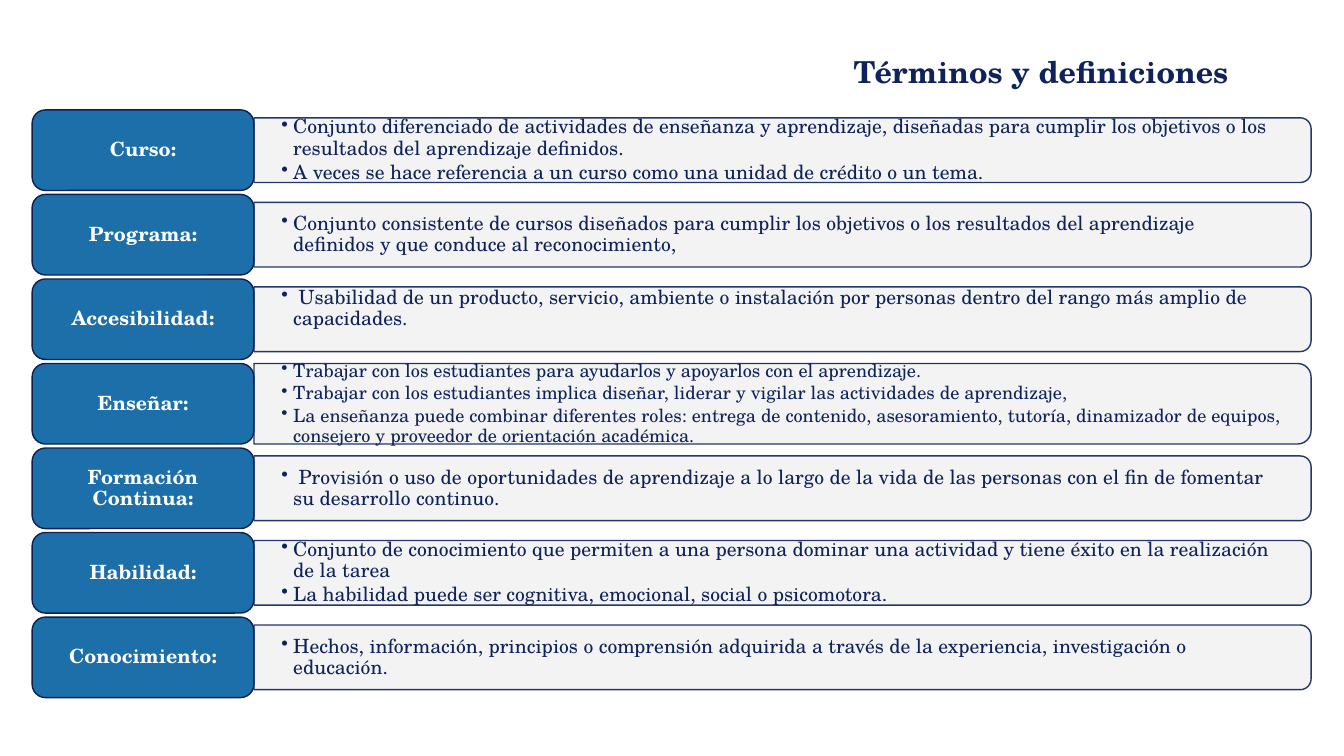
from typing import NamedTuple

from lxml import etree
from pptx import Presentation
from pptx.dml.color import RGBColor
from pptx.enum.shapes import MSO_SHAPE
from pptx.enum.text import MSO_ANCHOR, PP_ALIGN
from pptx.oxml.ns import qn
from pptx.util import Cm, Pt

ROUNDED = MSO_SHAPE.ROUNDED_RECTANGLE
ROUNDED_END = MSO_SHAPE.ROUND_2_SAME_RECTANGLE
MIDDLE = MSO_ANCHOR.MIDDLE
LEFT, CENTER = PP_ALIGN.LEFT, PP_ALIGN.CENTER

FONT = "TeX Gyre Schola"
NAVY, DARK_NAVY, BLUE = "0F235A", "0E2052", "1D6FA9"
PALE_GRAY, WHITE = "F2F2F2", "FFFFFF"

ROWS_TOP, ROW_PITCH = 2.77, 2.13
TERM_LEFT, TERM_WIDTH, TERM_HEIGHT = 0.81, 5.59, 2.03
PANEL_LEFT = TERM_LEFT + TERM_WIDTH
PANEL_WIDTH = 26.64


class Entry(NamedTuple):
    """A term, its definitions and the fit of its panel."""
    term: str
    definitions: list
    size: int = 14
    panel_height: float = 1.63
    bottom_inset: float = 0.36


ENTRIES = [
    Entry("Curso:", [
        "Conjunto diferenciado de actividades de enseñanza y aprendizaje, diseñadas para "
        "cumplir los objetivos o los resultados del aprendizaje definidos.",
        "A veces se hace referencia a un curso como una unidad de crédito o un tema."]),
    Entry("Programa:", [
        "Conjunto consistente de cursos diseñados para cumplir los objetivos o los "
        "resultados del aprendizaje definidos y que conduce al reconocimiento,"]),
    Entry("Accesibilidad:", [
        " Usabilidad de un producto, servicio, ambiente o instalación por personas dentro "
        "del rango más amplio de capacidades."], bottom_inset=0.9),
    Entry("Enseñar:", [
        "Trabajar con los estudiantes para ayudarlos y apoyarlos con el aprendizaje.",
        "Trabajar con los estudiantes implica diseñar, liderar y vigilar las actividades "
        "de aprendizaje,",
        "La enseñanza puede combinar diferentes roles: entrega de contenido, asesoramiento, "
        "tutoría, dinamizador de equipos, consejero y proveedor de orientación académica."],
        size=13, panel_height=2.03),
    Entry("Formación Continua:", [
        " Provisión o uso de oportunidades de aprendizaje a lo largo de la vida de las "
        "personas con el fin de fomentar su desarrollo continuo."]),
    Entry("Habilidad:", [
        "Conjunto de conocimiento que permiten a una persona dominar una actividad y tiene "
        "éxito en la realización de la tarea",
        "La habilidad puede ser cognitiva, emocional, social o psicomotora."]),
    Entry("Conocimiento:", [
        "Hechos, información, principios o comprensión adquirida a través de la "
        "experiencia, investigación o educación."]),
]


def paint(color_format, color):
    """Set a colour from a hex string."""
    color_format.rgb = RGBColor.from_string(color)


def set_opacity(shape, percent):
    """Make the fill and line of a shape partly transparent."""
    for color in shape._element.spPr.iter(qn("a:srgbClr")):
        etree.SubElement(color, qn("a:alpha"), val=str(percent * 1000))


def add_outlined_shape(slide, kind, left, top, width, height, fill, line):
    """Add a filled preset shape with a thin outline."""
    shape = slide.shapes.add_shape(kind, Cm(left), Cm(top), Cm(width), Cm(height))
    shape.shadow.inherit = False
    shape.fill.solid()
    paint(shape.fill.fore_color, fill)
    paint(shape.line.color, line)
    shape.line.width = Pt(1)
    return shape


def prepare_frame(shape, horizontal, top, bottom):
    """Wrap and centre the text of a shape vertically between its insets."""
    frame = shape.text_frame
    frame.word_wrap = True
    frame.vertical_anchor = MIDDLE
    frame.margin_left = frame.margin_right = Cm(horizontal)
    frame.margin_top, frame.margin_bottom = Cm(top), Cm(bottom)
    return frame


def write(paragraph, text, size, color, bold=False, alignment=LEFT):
    """Write one styled run in a paragraph."""
    paragraph.alignment = alignment
    paragraph.line_spacing = 0.9
    run = paragraph.add_run()
    run.text = text
    run.font.name = FONT
    run.font.size = Pt(size)
    run.font.bold = bold
    paint(run.font.color, color)


def add_bullet(paragraph):
    """Give a paragraph a hanging round bullet."""
    properties = paragraph._p.get_or_add_pPr()
    properties.set("marL", str(Cm(0.3)))
    properties.set("indent", str(-Cm(0.3)))
    etree.SubElement(properties, qn("a:buChar"), char="•")


def add_title(slide, text):
    """Add the slide title."""
    box = slide.shapes.add_textbox(Cm(21.26), Cm(1.45), Cm(10.64), Cm(0.81))
    frame = prepare_frame(box, 0.25, 0.13, 0.13)
    write(frame.paragraphs[0], text, 21.6, NAVY, bold=True)


def add_panel(slide, middle, height):
    """Add a pale panel whose right corners are rounded."""
    panel = add_outlined_shape(
        slide, ROUNDED_END, PANEL_LEFT + (PANEL_WIDTH - height) / 2,
        middle - PANEL_WIDTH / 2, height, PANEL_WIDTH, PALE_GRAY, NAVY)
    panel.rotation = 90
    set_opacity(panel, 90)


def add_definitions(slide, middle, entry):
    """Add the bulleted definitions over their panel."""
    height = entry.panel_height - 0.16
    box = slide.shapes.add_textbox(
        Cm(PANEL_LEFT), Cm(middle - height / 2), Cm(26.57), Cm(height))
    frame = prepare_frame(box, 0.69, 0.36, entry.bottom_inset)
    for index, definition in enumerate(entry.definitions):
        paragraph = frame.add_paragraph() if index else frame.paragraphs[0]
        add_bullet(paragraph)
        paragraph.level = 1
        paragraph.space_after = Pt(2)
        write(paragraph, definition, entry.size, NAVY)


def add_term(slide, top, term):
    """Add the blue box that names a term."""
    box = add_outlined_shape(
        slide, ROUNDED, TERM_LEFT, top, TERM_WIDTH, TERM_HEIGHT, BLUE, DARK_NAVY)
    frame = prepare_frame(box, 0.25, 0.18, 0.18)
    write(frame.paragraphs[0], term, 14, WHITE, bold=True, alignment=CENTER)


def main():
    """Build the slide of terms and definitions."""
    presentation = Presentation()
    presentation.slide_width, presentation.slide_height = Cm(33.87), Cm(19.05)
    slide = presentation.slides.add_slide(presentation.slide_layouts[6])
    for index, entry in enumerate(ENTRIES):
        top = ROWS_TOP + index * ROW_PITCH
        middle = top + TERM_HEIGHT / 2
        add_panel(slide, middle, entry.panel_height)
        add_definitions(slide, middle, entry)
        add_term(slide, top, entry.term)
    add_title(slide, "Términos y definiciones")
    presentation.save("out.pptx")


if __name__ == "__main__":
    main()
